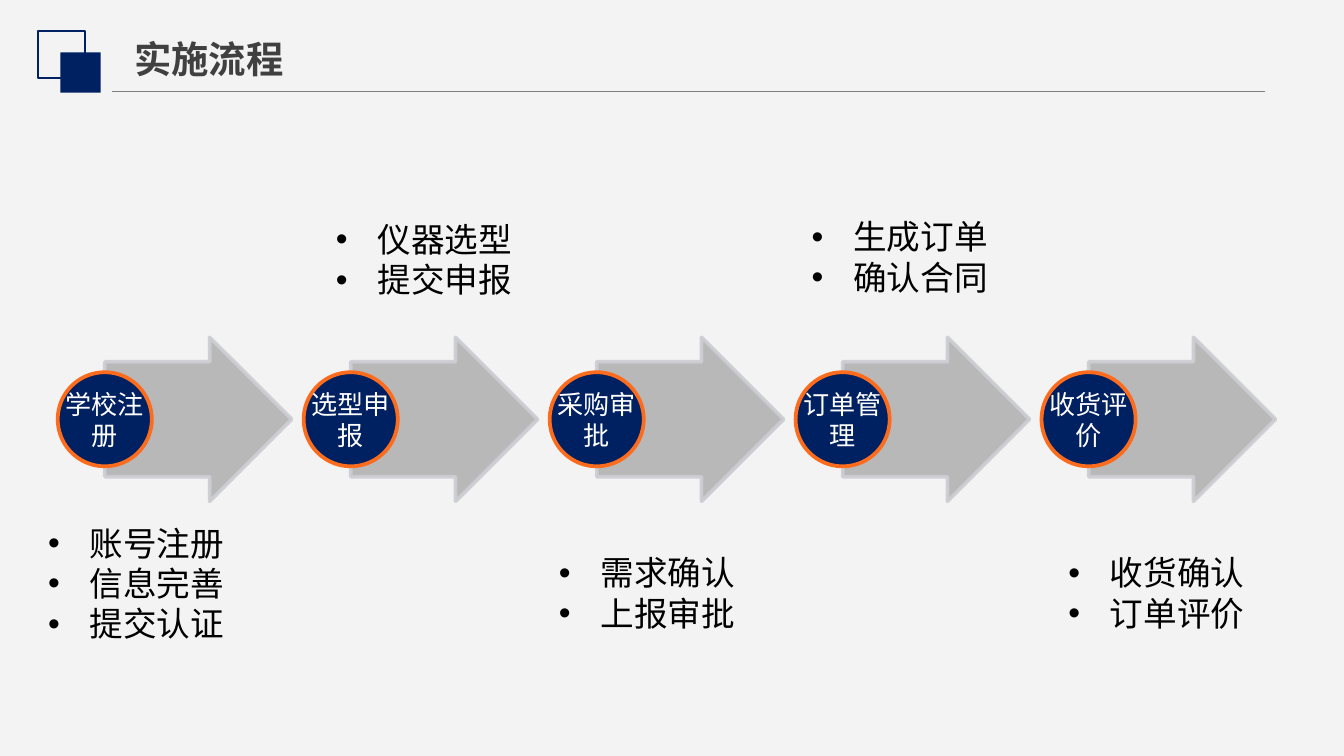
"""Build the five-step process slide."""
from dataclasses import dataclass

from lxml import etree
from pptx import Presentation, util as u
from pptx.dml import color as dc
from pptx.enum import shapes as sh, text as tx
from pptx.oxml import ns


@dataclass(frozen=True)
class Theme:
    font: str = "Noto Sans CJK SC"
    back: str = "F3F3F3"
    navy: str = "002161"
    rule: str = "808080"
    title: str = "404040"
    arrow: str = "B2B2B2"
    edge: str = "CCCDD2"
    ring: str = "FC6C1C"
    white: str = "FFFFFF"
    black: str = "000000"
    head: int = 20
    label: int = 14
    body: int = 18


@dataclass(frozen=True)
class Box:
    x: float
    y: float
    w: float
    h: float

    def lengths(self) -> tuple:
        return tuple(u.Inches(v) for v in (self.x, self.y, self.w, self.h))


@dataclass(frozen=True)
class Step:
    label: str
    x: float
    y: float
    items: tuple


THEME = Theme()
LEFT, PITCH = 0.43, 1.83
STEPS = (
    Step("学校注册", 0.26, 3.84, ("账号注册", "信息完善", "提交认证")),
    Step("选型申报", 2.4, 1.58, ("仪器选型", "提交申报")),
    Step("采购审批", 4.06, 4.06, ("需求确认", "上报审批")),
    Step("订单管理", 5.94, 1.56, ("生成订单", "确认合同")),
    Step("收货评价", 7.85, 4.06, ("收货确认", "订单评价")),
)


def tint(code: str) -> dc.RGBColor:
    """Turn a hex code into a colour."""
    return dc.RGBColor.from_string(code)


def fade(fill, share: int) -> None:
    """Set the opacity of a solid fill in percent."""
    tone = fill._xPr.find(ns.qn("a:solidFill"))[0]
    etree.SubElement(tone, ns.qn("a:alpha"), val=str(share * 1000))


def add_shape(slide, kind, box: Box, fill: str = "", line: str = "", width: float = 1):
    """Draw a preset shape, with no fill or line where none is named."""
    shape = slide.shapes.add_shape(kind, *box.lengths())
    shape.shadow.inherit = False
    if fill:
        shape.fill.solid()
        shape.fill.fore_color.rgb = tint(fill)
    else:
        shape.fill.background()
    if line:
        shape.line.color.rgb = tint(line)
        shape.line.width = u.Pt(width)
    else:
        shape.line.fill.background()
    return shape


def add_run(para, words: str, size: int, tone: str, bold: bool = False) -> None:
    """Add one run of text in the theme font."""
    run = para.add_run()
    run.text = words
    font = run.font
    font.name, font.size, font.bold = THEME.font, u.Pt(size), bold
    font.color.rgb = tint(tone)
    etree.SubElement(run._r.get_or_add_rPr(), ns.qn("a:ea"), typeface=THEME.font)


def add_frame(slide, box: Box, wrap: bool = True):
    """Add a text box and return its text frame."""
    frame = slide.shapes.add_textbox(*box.lengths()).text_frame
    frame.word_wrap = wrap
    return frame


def add_header(slide) -> None:
    """Draw the rule, the two squares and the title."""
    ends = (u.Inches(v) for v in (0.83, 0.68, 9.41, 0.68))
    rule = slide.shapes.add_connector(sh.MSO_CONNECTOR.STRAIGHT, *ends)
    rule.line.color.rgb = tint(THEME.rule)
    rule.line.width = u.Pt(0.75)
    etree.SubElement(rule._element.spPr, ns.qn("a:effectLst"))
    square = sh.MSO_SHAPE.RECTANGLE
    add_shape(slide, square, Box(0.28, 0.23, 0.35, 0.35), line=THEME.navy)
    add_shape(slide, square, Box(0.45, 0.39, 0.3, 0.3), fill=THEME.navy)
    frame = add_frame(slide, Box(0.9, 0.22, 1.32, 0.44), wrap=False)
    add_run(frame.paragraphs[0], "实施流程", THEME.head, THEME.title, bold=True)


def add_step(slide, step: Step, left: float) -> None:
    """Draw the arrow of a step with its labelled circle."""
    arrow = add_shape(slide, sh.MSO_SHAPE.RIGHT_ARROW, Box(left + 0.35, 2.51, 1.39, 1.22),
                      THEME.arrow, THEME.edge, 2)
    arrow.adjustments[0], arrow.adjustments[1] = 0.7, 0.5
    fade(arrow.fill, 90)
    fade(arrow.line.fill, 90)
    disc = Box(left, 2.77, 0.7, 0.7)
    add_shape(slide, sh.MSO_SHAPE.OVAL, disc, THEME.navy, THEME.ring, 2)
    frame = add_frame(slide, disc)
    frame.margin_left = frame.margin_right = u.Inches(0.01)
    frame.margin_top = frame.margin_bottom = u.Inches(0.01)
    frame.vertical_anchor = tx.MSO_ANCHOR.MIDDLE
    para = frame.paragraphs[0]
    para.alignment = tx.PP_ALIGN.CENTER
    add_run(para, step.label, THEME.label, THEME.white)


def add_list(slide, step: Step) -> None:
    """Write the bulleted tasks of a step."""
    frame = add_frame(slide, Box(step.x, step.y, 1.65, 0.11 + 0.3 * len(step.items)))
    for rank, item in enumerate(step.items):
        para = frame.add_paragraph() if rank else frame.paragraphs[0]
        props = para._p.get_or_add_pPr()
        props.set("marL", str(u.Inches(0.31)))
        props.set("indent", str(-u.Inches(0.31)))
        etree.SubElement(props, ns.qn("a:buFont"), typeface="Arial")
        etree.SubElement(props, ns.qn("a:buChar"), char="•")
        add_run(para, item, THEME.body, THEME.black)


def main() -> None:
    """Build and save the slide."""
    deck = Presentation()
    deck.slide_width = u.Inches(10)
    deck.slide_height = deck.slide_width * 9 // 16
    slide = deck.slides.add_slide(deck.slide_layouts[6])
    slide.background.fill.solid()
    slide.background.fill.fore_color.rgb = tint(THEME.back)
    add_header(slide)
    for rank, step in enumerate(STEPS):
        add_step(slide, step, LEFT + rank * PITCH)
    for step in STEPS:
        add_list(slide, step)
    deck.save("out.pptx")


if __name__ == "__main__":
    main()
